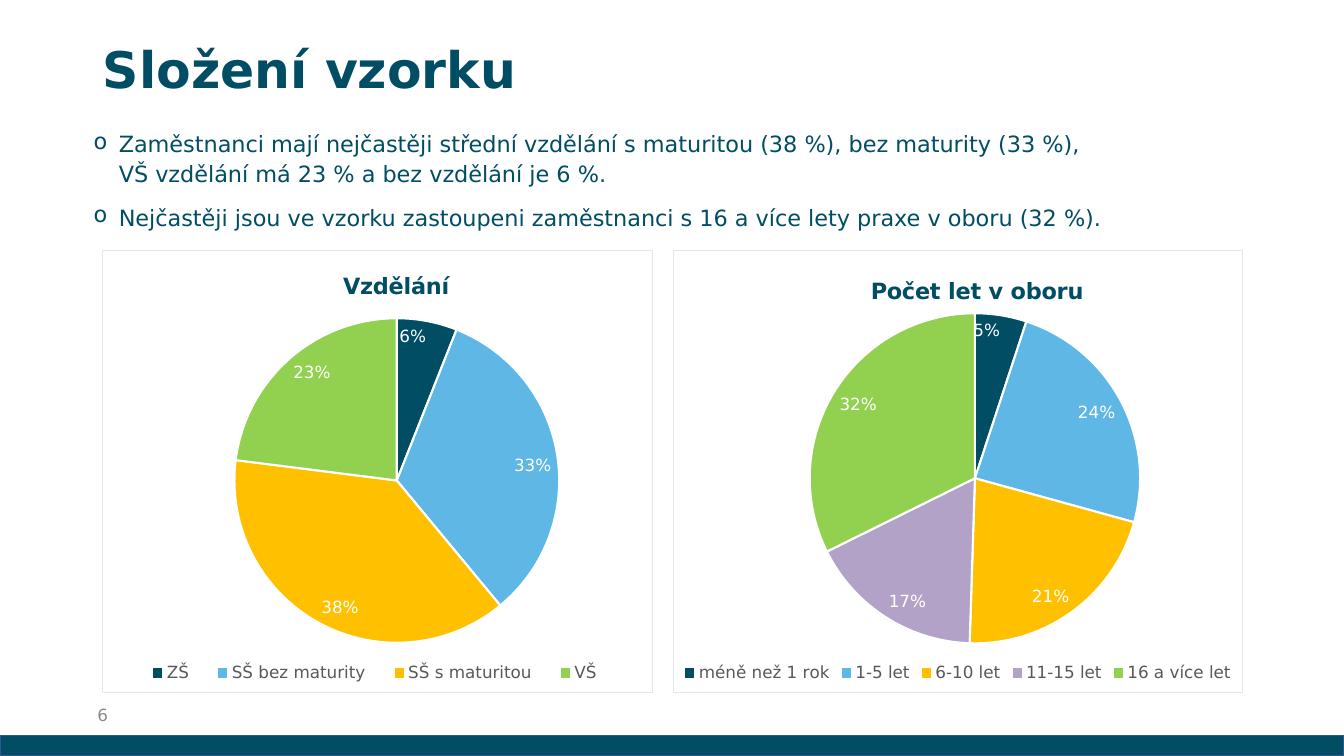
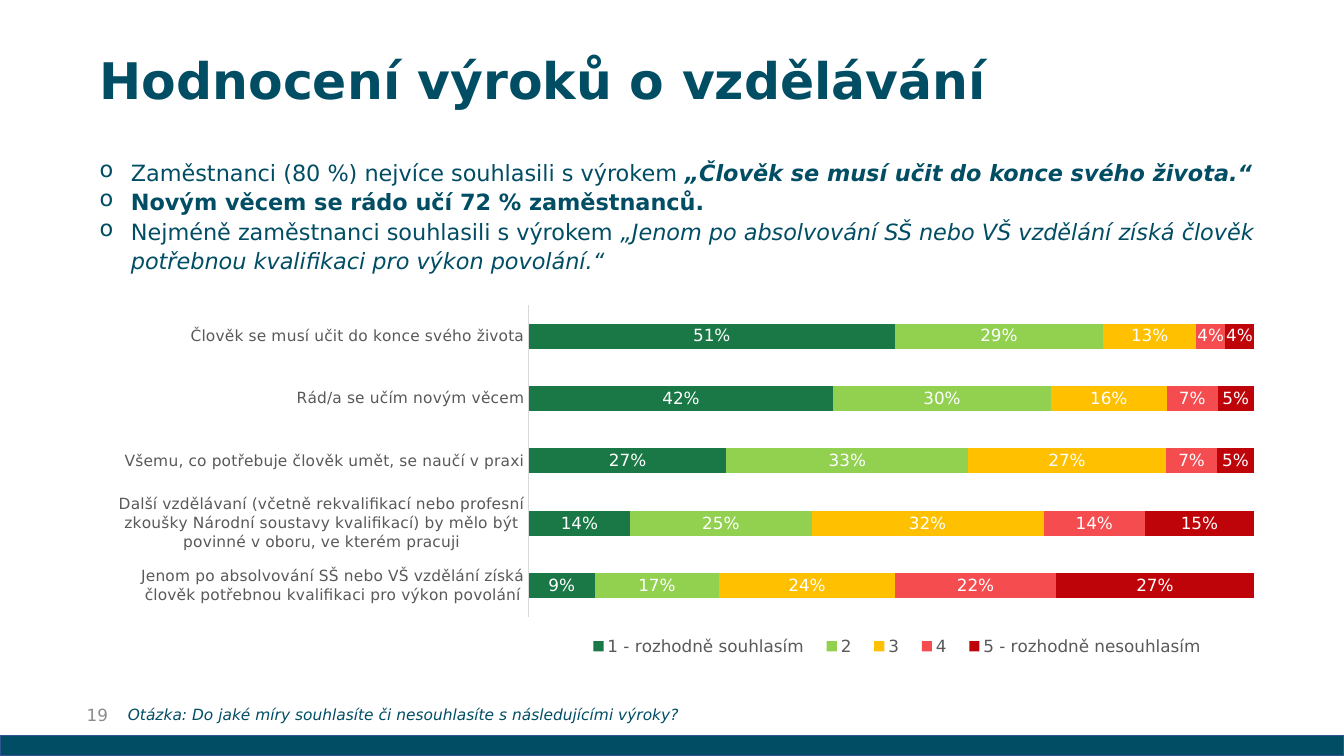
import pptx
import pptx.chart.data
import pptx.dml.color
import pptx.enum.chart
import pptx.enum.shapes
import pptx.enum.text
import pptx.oxml
import pptx.oxml.ns
import pptx.util

Inches = pptx.util.Inches
Pt = pptx.util.Pt
RGBColor = pptx.dml.color.RGBColor
qn = pptx.oxml.ns.qn
XL = pptx.enum.chart

FONT = "DejaVu Sans"
TEAL = RGBColor(0x00, 0x4D, 0x64)
BLUE = RGBColor(0x5F, 0xB7, 0xE5)
AMBER = RGBColor(0xFF, 0xC0, 0x00)
LILAC = RGBColor(0xB3, 0xA2, 0xC7)
LIME = RGBColor(0x92, 0xD0, 0x50)
GREEN = RGBColor(0x1A, 0x78, 0x46)
RED = RGBColor(0xF5, 0x4C, 0x50)
DARK_RED = RGBColor(0xBF, 0x04, 0x09)
BAND_LINE = RGBColor(0x32, 0x54, 0x91)
TEXT_GREY = RGBColor(0x59, 0x59, 0x59)
NUMBER_GREY = RGBColor(0x8C, 0x8C, 0x8C)
AXIS_GREY = RGBColor(0xD9, 0xD9, 0xD9)
FRAME_GREY = RGBColor(0xE7, 0xE6, 0xE6)
WHITE = RGBColor(0xFF, 0xFF, 0xFF)


class Deck:
    def __init__(self):
        self.prs = pptx.Presentation()
        self.prs.slide_width = Inches(13.33)
        self.prs.slide_height = Inches(7.5)
        self.s = None

    def style(self, font, size, color=TEAL, bold=False, italic=False):
        font.name = FONT
        font.size = Pt(size)
        font.color.rgb = color
        font.bold = bold
        font.italic = italic

    def slide(self, title, number, left, top, height):
        self.s = self.prs.slides.add_slide(self.prs.slide_layouts[5])
        sp = self.s.shapes.title
        sp.left, sp.top = Inches(left), Inches(top)
        sp.width, sp.height = Inches(11.5), Inches(height)
        tf = sp.text_frame
        tf.text = title
        tf.auto_size = pptx.enum.text.MSO_AUTO_SIZE.NONE
        tf.vertical_anchor = pptx.enum.text.MSO_ANCHOR.MIDDLE
        p = tf.paragraphs[0]
        p.alignment = pptx.enum.text.PP_ALIGN.LEFT
        p.line_spacing = 0.9
        self.style(p.runs[0].font, 36, bold=True)
        self.band()
        tf = self.text(str(number), 0.66, 6.89, 0.51, 0.4, 12, NUMBER_GREY)
        tf.vertical_anchor = pptx.enum.text.MSO_ANCHOR.MIDDLE
        tf.paragraphs[0].alignment = pptx.enum.text.PP_ALIGN.RIGHT

    def band(self):
        sp = self.s.shapes.add_shape(
            pptx.enum.shapes.MSO_SHAPE.RECTANGLE,
            0, Inches(7.3), self.prs.slide_width, Inches(0.2))
        sp.shadow.inherit = False
        sp.fill.solid()
        sp.fill.fore_color.rgb = TEAL
        sp.line.color.rgb = BAND_LINE
        sp.line.width = Pt(1)

    def box(self, left, top, width, height):
        sp = self.s.shapes.add_textbox(
            Inches(left), Inches(top), Inches(width), Inches(height))
        sp.text_frame.word_wrap = True
        return sp.text_frame

    def text(self, text, left, top, width, height, size, color=TEAL, italic=False):
        tf = self.box(left, top, width, height)
        tf.text = text
        self.style(tf.paragraphs[0].runs[0].font, size, color, italic=italic)
        return tf

    def bullets(self, items, left, top, width, height, indent, before=0):
        tf = self.box(left, top, width, height)
        for i, item in enumerate(items):
            p = tf.add_paragraph() if i else tf.paragraphs[0]
            p.line_spacing = 1.1
            p.space_before = Pt(before)
            pPr = p._p.get_or_add_pPr()
            pPr.set("marL", str(Inches(indent)))
            pPr.set("indent", str(-Inches(indent)))
            bullet = pptx.oxml.parse_xml(
                f'<a:buChar {pptx.oxml.ns.nsdecls("a")} char="o"/>')
            pPr.append(bullet)
            for text, marks in item:
                for n, line in enumerate(text.split("\n")):
                    if n:
                        p.add_line_break()
                    r = p.add_run()
                    r.text = line
                    self.style(r.font, 16, bold="b" in marks, italic="i" in marks)

    def chart(self, kind, cats, series, left, top, width, height, legend):
        data = pptx.chart.data.CategoryChartData(number_format="0%")
        data.categories = cats
        for name, vals in series:
            data.add_series(name, vals)
        chart = self.s.shapes.add_chart(
            kind, Inches(left), Inches(top), Inches(width), Inches(height), data).chart
        self.style(chart.font, 12, TEXT_GREY)
        chart.has_title = False
        chart.has_legend = True
        chart.legend.position = XL.XL_LEGEND_POSITION.BOTTOM
        chart.legend.include_in_layout = False
        self.style(chart.legend.font, 12, TEXT_GREY)
        self.place(chart, "legend", 1, *legend)
        plot = chart.plots[0]
        plot.has_data_labels = True
        labels = plot.data_labels
        labels.show_value = True
        labels.number_format = "0%"
        labels.number_format_is_linked = False
        self.style(labels.font, 12, WHITE)
        return chart

    def place(self, chart, part, index, *bounds):
        parent = chart._chartSpace.find(".//" + qn("c:" + part))
        for old in parent.findall(qn("c:layout")):
            parent.remove(old)
        target = '<c:layoutTarget val="inner"/>' if part == "plotArea" else ""
        modes = "".join(f'<c:{a}Mode val="edge"/>' for a in "xy")
        sizes = "".join(f'<c:{a} val="{v}"/>' for a, v in zip("xywh", bounds))
        parent.insert(index, pptx.oxml.parse_xml(
            f'<c:layout {pptx.oxml.ns.nsdecls("c")}><c:manualLayout>'
            f'{target}{modes}{sizes}</c:manualLayout></c:layout>'))

    def frame(self, chart):
        chart._chartSpace.find(qn("c:chart")).addnext(pptx.oxml.parse_xml(
            f'<c:spPr {pptx.oxml.ns.nsdecls("c", "a")}>'
            f'<a:solidFill><a:srgbClr val="{WHITE}"/></a:solidFill>'
            f'<a:ln w="{Pt(0.75)}"><a:solidFill><a:srgbClr val="{FRAME_GREY}"/>'
            '</a:solidFill></a:ln></c:spPr>'))

    def pie(self, title, slices, left, width, title_at, plot_area, legend):
        cats, vals, colors = zip(*slices)
        chart = self.chart(XL.XL_CHART_TYPE.PIE, cats, [(title, vals)],
                           left, 2.48, width, 4.4, legend)
        chart.has_title = True
        tf = chart.chart_title.text_frame
        tf.text = title
        self.style(tf.paragraphs[0].runs[0].font, 16, bold=True)
        self.place(chart, "title", 1, *title_at)
        self.place(chart, "plotArea", 0, *plot_area)
        self.frame(chart)
        plot = chart.plots[0]
        plot.vary_by_categories = True
        plot.data_labels.position = XL.XL_LABEL_POSITION.INSIDE_END
        for i, color in enumerate(colors):
            fmt = plot.series[0].points[i].format
            fmt.fill.solid()
            fmt.fill.fore_color.rgb = color
            fmt.line.color.rgb = WHITE
            fmt.line.width = Pt(1.5)

    def stacked_bars(self, cats, series, left, top, width, height, plot_area, legend):
        chart = self.chart(XL.XL_CHART_TYPE.BAR_STACKED_100, cats,
                           [(name, vals) for name, vals, _ in series],
                           left, top, width, height, legend)
        self.place(chart, "plotArea", 0, *plot_area)
        plot = chart.plots[0]
        plot.vary_by_categories = False
        plot.gap_width = 150
        plot.overlap = 100
        plot.data_labels.position = XL.XL_LABEL_POSITION.CENTER
        for ser, (_, _, color) in zip(plot.series, series):
            ser.format.fill.solid()
            ser.format.fill.fore_color.rgb = color
        chart.value_axis.visible = False
        chart.value_axis.has_major_gridlines = False
        axis = chart.category_axis
        axis.major_tick_mark = XL.XL_TICK_MARK.NONE
        axis.format.line.color.rgb = AXIS_GREY
        axis.format.line.width = Pt(0.75)
        self.style(axis.tick_labels.font, 11, TEXT_GREY)


def main():
    d = Deck()

    d.slide("Složení vzorku", 6, 0.92, -0.01, 1.45)
    d.pie("Vzdělání",
          [("ZŠ", 0.06, TEAL), ("SŠ bez maturity", 0.33, BLUE),
           ("SŠ s maturitou", 0.38, AMBER), ("VŠ", 0.23, LIME)],
          1.01, 5.47, (0.43, 0.04), (0.24, 0.15, 0.59, 0.74), (0.05, 0.92, 0.89, 0.07))
    d.pie("Počet let v oboru",
          [("méně než 1 rok", 0.05, TEAL), ("1-5 let", 0.24, BLUE),
           ("6-10 let", 0.21, AMBER), ("11-15 let", 0.17, LILAC),
           ("16 a více let", 0.32, LIME)],
          6.67, 5.66, (0.34, 0.05), (0.24, 0.14, 0.58, 0.75), (0.01, 0.92, 0.98, 0.07))
    d.bullets(
        [[("Zaměstnanci mají nejčastěji střední vzdělání s maturitou (38 %), "
           "bez maturity (33 %),\nVŠ vzdělání má 23 % a bez vzdělání je 6 %.", "")],
         [("Nejčastěji jsou ve vzorku zastoupeni zaměstnanci s 16 a více lety "
           "praxe v oboru (32 %).", "")]],
        0.83, 1.22, 11.5, 0.86, 0.25, before=10)

    d.slide("Hodnocení výroků o vzdělávání", 19, 0.89, 0.21, 1.23)
    d.stacked_bars(
        ["Jenom po absolvování SŠ nebo VŠ vzdělání získá člověk potřebnou "
         "kvalifikaci pro výkon povolání",
         "Další vzdělávaní (včetně rekvalifikací nebo profesní zkoušky Národní "
         "soustavy kvalifikací) by mělo být povinné v oboru, ve kterém pracuji",
         "Všemu, co potřebuje člověk umět, se naučí v praxi",
         "Rád/a se učím novým věcem",
         "Člověk se musí učit do konce svého života"],
        [("1 - rozhodně souhlasím", (0.09, 0.14, 0.27, 0.42, 0.51), GREEN),
         ("2", (0.17, 0.25, 0.33, 0.3, 0.29), LIME),
         ("3", (0.24, 0.32, 0.27, 0.16, 0.13), AMBER),
         ("4", (0.22, 0.14, 0.07, 0.07, 0.04), RED),
         ("5 - rozhodně nesouhlasím", (0.27, 0.15, 0.05, 0.05, 0.04), DARK_RED)],
        1, 2.99, 11.79, 3.64, (0.36, 0.01, 0.61, 0.85), (0.4, 0.9, 0.54, 0.08))
    d.text("Otázka: Do jaké míry souhlasíte či nesouhlasíte s následujícími výroky?",
           1.17, 6.95, 9.6, 0.29, 11, italic=True)
    d.bullets(
        [[("Zaměstnanci (80 %) nejvíce souhlasili s výrokem ", ""),
          ("„Člověk se musí učit do konce svého života.“", "bi")],
         [("Novým věcem se rádo učí 72 % zaměstnanců.", "b")],
         [("Nejméně zaměstnanci souhlasili s výrokem ", ""),
          ("„Jenom po absolvování SŠ nebo VŠ vzdělání získá člověk potřebnou "
           "kvalifikaci pro výkon povolání.“", "i")]],
        0.89, 1.5, 12.09, 1.26, 0.31)

    d.prs.save("out.pptx")


if __name__ == "__main__":
    main()
